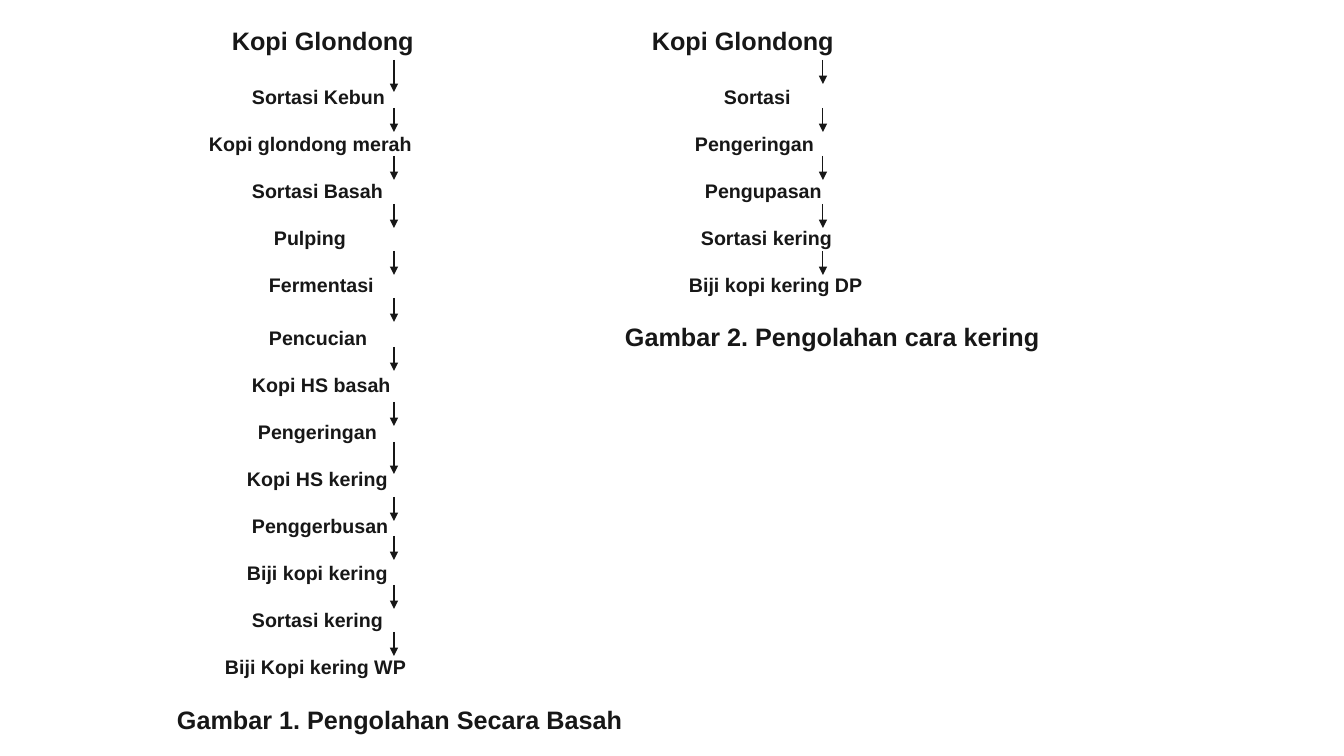
import pptx
import pptx.dml.color
import pptx.enum.shapes
import pptx.enum.text
import pptx.util
from lxml import etree
from pptx.oxml.ns import qn

INK = pptx.dml.color.RGBColor(0x17, 0x17, 0x17)
WHITE = pptx.dml.color.RGBColor(0xFF, 0xFF, 0xFF)
EMU_PER_PX = 914400 / 100.8
HEADING_SIZE = 18
STEP_SIZE = 14
STEP_PITCH = 47
ARROW_LENGTH = 24

WET_STEPS = [
    (252, "Sortasi Kebun"),
    (209, "Kopi glondong merah"),
    (252, "Sortasi Basah"),
    (274, "Pulping"),
    (269, "Fermentasi"),
    (269, "Pencucian"),
    (252, "Kopi HS basah"),
    (258, "Pengeringan"),
    (247, "Kopi HS kering"),
    (252, "Penggerbusan"),
    (247, "Biji kopi kering"),
    (252, "Sortasi kering"),
    (225, "Biji Kopi kering WP"),
]
DRY_STEPS = [
    (724, "Sortasi"),
    (695, "Pengeringan"),
    (705, "Pengupasan"),
    (701, "Sortasi kering"),
    (689, "Biji kopi kering DP"),
]
ARROW_TOPS = [60, 108, 156, 204, 251, 298, 347, 402, 442, 497, 536, 585, 632]
LONG_WET_ARROWS = {60: 32, 442: 32}
STEP_MIDDLES = [97 + STEP_PITCH * row + (6 if row >= 5 else 0)
                for row in range(len(WET_STEPS))]


class Diagram:
    font = "Arial"

    def __init__(self, width, height):
        self.deck = pptx.Presentation()
        self.deck.slide_width = self.px(width)
        self.deck.slide_height = self.px(height)
        self.slide = self.deck.slides.add_slide(self.deck.slide_layouts[6])
        self.slide.background.fill.solid()
        self.slide.background.fill.fore_color.rgb = WHITE

    def px(self, length):
        return pptx.util.Emu(round(length * EMU_PER_PX))

    def label(self, left, middle, text, size, width=240, height=30):
        box = self.slide.shapes.add_textbox(
            self.px(left), self.px(middle - height // 2), self.px(width), self.px(height))
        frame = box.text_frame
        frame.word_wrap = True
        frame.vertical_anchor = pptx.enum.text.MSO_ANCHOR.MIDDLE
        frame.margin_left = frame.margin_right = 0
        frame.margin_top = frame.margin_bottom = 0
        paragraph = frame.paragraphs[0]
        paragraph.text = text
        paragraph.font.name = self.font
        paragraph.font.size = pptx.util.Pt(size)
        paragraph.font.bold = True
        paragraph.font.color.rgb = INK

    def arrow(self, x, top, length):
        connector = self.slide.shapes.add_connector(
            pptx.enum.shapes.MSO_CONNECTOR.STRAIGHT,
            self.px(x), self.px(top), self.px(x), self.px(top + length))
        connector.line.color.rgb = INK
        connector.line.width = pptx.util.Pt(0.75)
        properties = connector._element.spPr
        outline = properties.find(qn("a:ln"))
        etree.SubElement(outline, qn("a:tailEnd"), type="triangle")
        etree.SubElement(properties, qn("a:effectLst"))

    def process(self, heading_left, steps, arrow_x, long_arrows):
        self.label(heading_left, 40, "Kopi Glondong", HEADING_SIZE)
        for (left, text), middle, top in zip(steps, STEP_MIDDLES, ARROW_TOPS):
            self.label(left, middle, text, STEP_SIZE)
            self.arrow(arrow_x, top, long_arrows.get(top, ARROW_LENGTH))

    def caption(self, left, middle, text):
        self.label(left, middle, text, HEADING_SIZE, width=480)

    def save(self):
        self.deck.save("out.pptx")


def main():
    diagram = Diagram(1344, 756)
    diagram.process(232, WET_STEPS, 394, LONG_WET_ARROWS)
    diagram.process(652, DRY_STEPS, 823, {})
    diagram.caption(177, 719, "Gambar 1. Pengolahan Secara Basah")
    diagram.caption(625, 336, "Gambar 2. Pengolahan cara kering")
    diagram.save()


if __name__ == "__main__":
    main()
